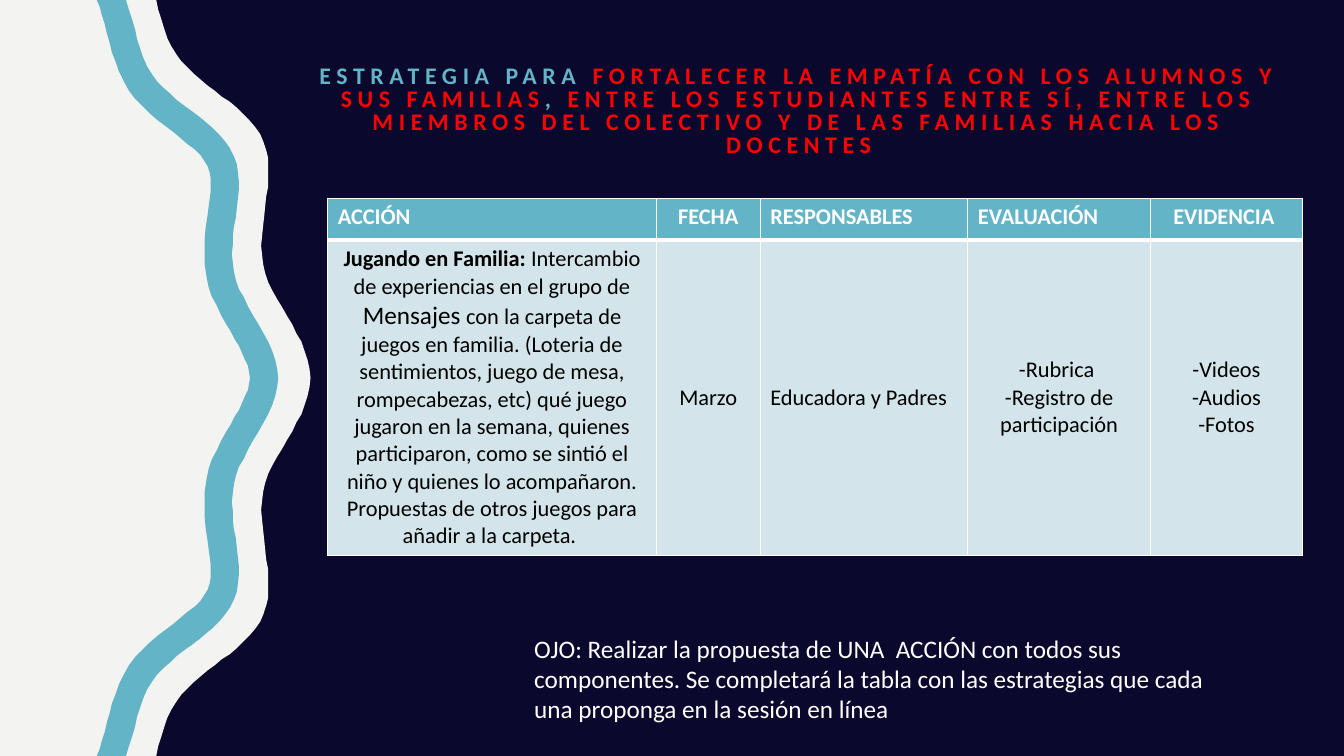
from lxml import etree
from pptx import Presentation
from pptx.dml.color import RGBColor
from pptx.enum.text import MSO_ANCHOR, PP_ALIGN
from pptx.oxml.ns import qn
from pptx.util import Inches, Pt

LEFT, CENTER = PP_ALIGN.LEFT, PP_ALIGN.CENTER
TOP, MIDDLE = MSO_ANCHOR.TOP, MSO_ANCHOR.MIDDLE

NAVY = RGBColor(0x0B, 0x08, 0x2E)
CREAM = RGBColor(0xF3, 0xF3, 0xF2)
TEAL = RGBColor(0x62, 0xB4, 0xC6)
PALE = RGBColor(0xD3, 0xE5, 0xEA)
RED = RGBColor(0xFF, 0, 0)
WHITE = RGBColor(0xFF, 0xFF, 0xFF)
BLACK = RGBColor(0, 0, 0)
FONT = "Calibri"
PAGE_HEIGHT = 7.5

# Content: a span is (text, size, bold, colour)
TITLE = [
    ("ESTRATEGIA PARA ", 17, True, TEAL),
    ("FORTALECER LA EMPATÍA CON LOS ALUMNOS Y SUS FAMILIAS", 17, True, RED),
    (", ", 17, True, TEAL),
    ("ENTRE LOS ESTUDIANTES ENTRE SÍ, ENTRE LOS MIEMBROS DEL COLECTIVO "
     "Y DE LAS FAMILIAS HACIA LOS DOCENTES", 17, True, RED),
]
NOTICE = [("OJO: Realizar la propuesta de UNA  ACCIÓN con todos sus componentes. "
           "Se completará la tabla con las estrategias que cada una proponga "
           "en la sesión en línea", 18, False, WHITE)]
ACTION = [
    ("Jugando en Familia: ", 16, True, BLACK),
    ("Intercambio de experiencias en el grupo de ", 16, False, BLACK),
    ("Mensajes ", 18, False, BLACK),
    ("con la carpeta de juegos en familia. (Loteria de sentimientos, juego de "
     "mesa, rompecabezas, etc) qué juego jugaron en la semana, quienes "
     "participaron, como se sintió el niño y quienes lo acompañaron. "
     "Propuestas de otros juegos para añadir a la carpeta. ", 16, False, BLACK),
]
# Columns: heading, width, heading alignment, body alignment, body lines
COLUMNS = [
    ("ACCIÓN", 3.26, LEFT, CENTER, [ACTION]),
    ("FECHA", 1.03, CENTER, CENTER, ["Marzo"]),
    ("RESPONSABLES", 2.06, LEFT, LEFT, ["Educadora y Padres"]),
    ("EVALUACIÓN", 1.81, LEFT, CENTER, ["-Rubrica ", "-Registro de participación"]),
    ("EVIDENCIA ", 1.51, CENTER, CENTER, ["-Videos", "-Audios", "-Fotos"]),
]
ROW_HEIGHTS = [0.41, 3.13]

# Upper halves of the wavy edges, down to the middle of the page
CREAM_EDGE = [
    (1.55, 0), (1.57, 0.1), (1.6, 0.19), (1.63, 0.29), (1.66, 0.38), (1.7, 0.46),
    (1.75, 0.54), (1.8, 0.61), (1.86, 0.67), (1.92, 0.73), (1.99, 0.79),
    (2.06, 0.85), (2.13, 0.9), (2.2, 0.96), (2.28, 1.01), (2.35, 1.07),
    (2.41, 1.13), (2.47, 1.19), (2.53, 1.26), (2.58, 1.33), (2.61, 1.4),
    (2.64, 1.49), (2.66, 1.57), (2.66, 1.67), (2.66, 1.76), (2.66, 1.85),
    (2.64, 1.95), (2.63, 2.05), (2.62, 2.15), (2.61, 2.24), (2.6, 2.34),
    (2.59, 2.44), (2.6, 2.53), (2.61, 2.62), (2.63, 2.71), (2.66, 2.8),
    (2.7, 2.88), (2.75, 2.97), (2.8, 3.05), (2.85, 3.14), (2.9, 3.22),
    (2.94, 3.31), (2.99, 3.39), (3.02, 3.48), (3.05, 3.57), (3.07, 3.66),
    (3.08, 3.75),
]
RIBBON_RIGHT = [
    (1.25, 0), (1.28, 0.1), (1.31, 0.19), (1.34, 0.29), (1.36, 0.39), (1.39, 0.48),
    (1.42, 0.57), (1.46, 0.66), (1.51, 0.74), (1.56, 0.81), (1.62, 0.87),
    (1.69, 0.93), (1.75, 0.99), (1.83, 1.05), (1.9, 1.1), (1.98, 1.16),
    (2.05, 1.22), (2.11, 1.27), (2.18, 1.34), (2.23, 1.4), (2.28, 1.47),
    (2.32, 1.55), (2.35, 1.63), (2.36, 1.71), (2.37, 1.8), (2.37, 1.88),
    (2.36, 1.97), (2.35, 2.06), (2.34, 2.16), (2.32, 2.25), (2.31, 2.34),
    (2.31, 2.43), (2.3, 2.52), (2.31, 2.61), (2.32, 2.69), (2.34, 2.78),
    (2.37, 2.87), (2.42, 2.95), (2.46, 3.04), (2.51, 3.13), (2.56, 3.21),
    (2.61, 3.3), (2.66, 3.39), (2.7, 3.48), (2.73, 3.57), (2.75, 3.66),
    (2.76, 3.75),
]
RIBBON_LEFT = [
    (0.96, 0), (0.99, 0.07), (1.01, 0.15), (1.04, 0.24), (1.06, 0.33), (1.09, 0.43),
    (1.11, 0.52), (1.15, 0.62), (1.18, 0.71), (1.23, 0.81), (1.28, 0.9),
    (1.34, 0.98), (1.41, 1.05), (1.48, 1.12), (1.56, 1.19), (1.64, 1.25),
    (1.72, 1.31), (1.79, 1.37), (1.86, 1.43), (1.93, 1.48), (1.99, 1.54),
    (2.03, 1.6), (2.06, 1.65), (2.08, 1.71), (2.09, 1.77), (2.09, 1.83),
    (2.09, 1.9), (2.08, 1.98), (2.07, 2.05), (2.06, 2.13), (2.04, 2.26),
    (2.03, 2.38), (2.03, 2.5), (2.03, 2.62), (2.05, 2.75), (2.07, 2.85),
    (2.1, 2.94), (2.15, 3.03), (2.19, 3.12), (2.24, 3.21), (2.29, 3.29),
    (2.33, 3.37), (2.37, 3.43), (2.4, 3.5), (2.43, 3.57), (2.46, 3.63),
    (2.47, 3.69), (2.48, 3.75),
]


def whole_edge(half):
    """Reflect an upper half edge below the middle of the page."""
    return half + [(x, PAGE_HEIGHT - y) for x, y in reversed(half[:-1])]


def add_wave(page, points, color):
    corners = [(Inches(x), Inches(y)) for x, y in points]
    builder = page.shapes.build_freeform(*corners[0])
    builder.add_line_segments(corners[1:], close=True)
    wave = builder.convert_to_shape()
    wave.shadow.inherit = False
    wave.fill.solid()
    wave.fill.fore_color.rgb = color
    wave.line.fill.background()


def write_spans(para, spans, align):
    para.alignment = align
    for text, size, bold, color in spans:
        span = para.add_run()
        span.text = text
        span.font.name = FONT
        span.font.size = Pt(size)
        span.font.bold = bold
        span.font.color.rgb = color


def add_text(page, left, top, width, height, spans, align):
    box = page.shapes.add_textbox(Inches(left), Inches(top), Inches(width), Inches(height))
    box.text_frame.word_wrap = True
    para = box.text_frame.paragraphs[0]
    write_spans(para, spans, align)
    return para


def set_borders(cell, widths):
    properties = cell._tc.get_or_add_tcPr()
    for side, width in widths.items():
        line = etree.SubElement(properties, qn("a:ln" + side), w=str(Pt(width)))
        fill = etree.SubElement(line, qn("a:solidFill"))
        etree.SubElement(fill, qn("a:srgbClr"), val=str(WHITE))


def fill_cell(cell, lines, align, anchor, color, widths):
    set_borders(cell, widths)
    cell.fill.solid()
    cell.fill.fore_color.rgb = color
    cell.vertical_anchor = anchor
    for index, spans in enumerate(lines):
        frame = cell.text_frame
        para = frame.add_paragraph() if index else frame.paragraphs[0]
        write_spans(para, spans, align)


def main():
    deck = Presentation()
    deck.slide_width, deck.slide_height = Inches(13.33), Inches(PAGE_HEIGHT)
    page = deck.slides.add_slide(deck.slide_layouts[6])
    page.background.fill.solid()
    page.background.fill.fore_color.rgb = NAVY

    # Wavy side band
    add_wave(page, [(0, 0)] + whole_edge(CREAM_EDGE) + [(0, PAGE_HEIGHT)], CREAM)
    add_wave(page, whole_edge(RIBBON_RIGHT) + whole_edge(RIBBON_LEFT)[::-1], TEAL)

    # Title
    title = add_text(page, 2.92, 0.61, 10, 1.04, TITLE, CENTER)
    title.line_spacing = 0.8
    for span in title.runs:
        span.font._element.set("spc", "400")

    # Strategy table
    table = page.shapes.add_table(
        len(ROW_HEIGHTS), len(COLUMNS), Inches(3.25), Inches(1.97),
        Inches(sum(column[1] for column in COLUMNS)), Inches(sum(ROW_HEIGHTS))).table
    for row, height in zip(table.rows, ROW_HEIGHTS):
        row.height = Inches(height)
    for index, (heading, width, head_align, body_align, lines) in enumerate(COLUMNS):
        table.columns[index].width = Inches(width)
        fill_cell(table.cell(0, index), [[(heading, 16, True, WHITE)]], head_align,
                  TOP, TEAL, {"L": 1, "R": 1, "T": 1, "B": 3})
        body = [[(line, 16, False, BLACK)] if isinstance(line, str) else line
                for line in lines]
        fill_cell(table.cell(1, index), body, body_align,
                  MIDDLE, PALE, {"L": 1, "R": 1, "T": 3, "B": 1})

    # Closing notice
    add_text(page, 5.2, 6.23, 6.85, 1.01, NOTICE, LEFT)
    deck.save("out.pptx")


if __name__ == "__main__":
    main()
